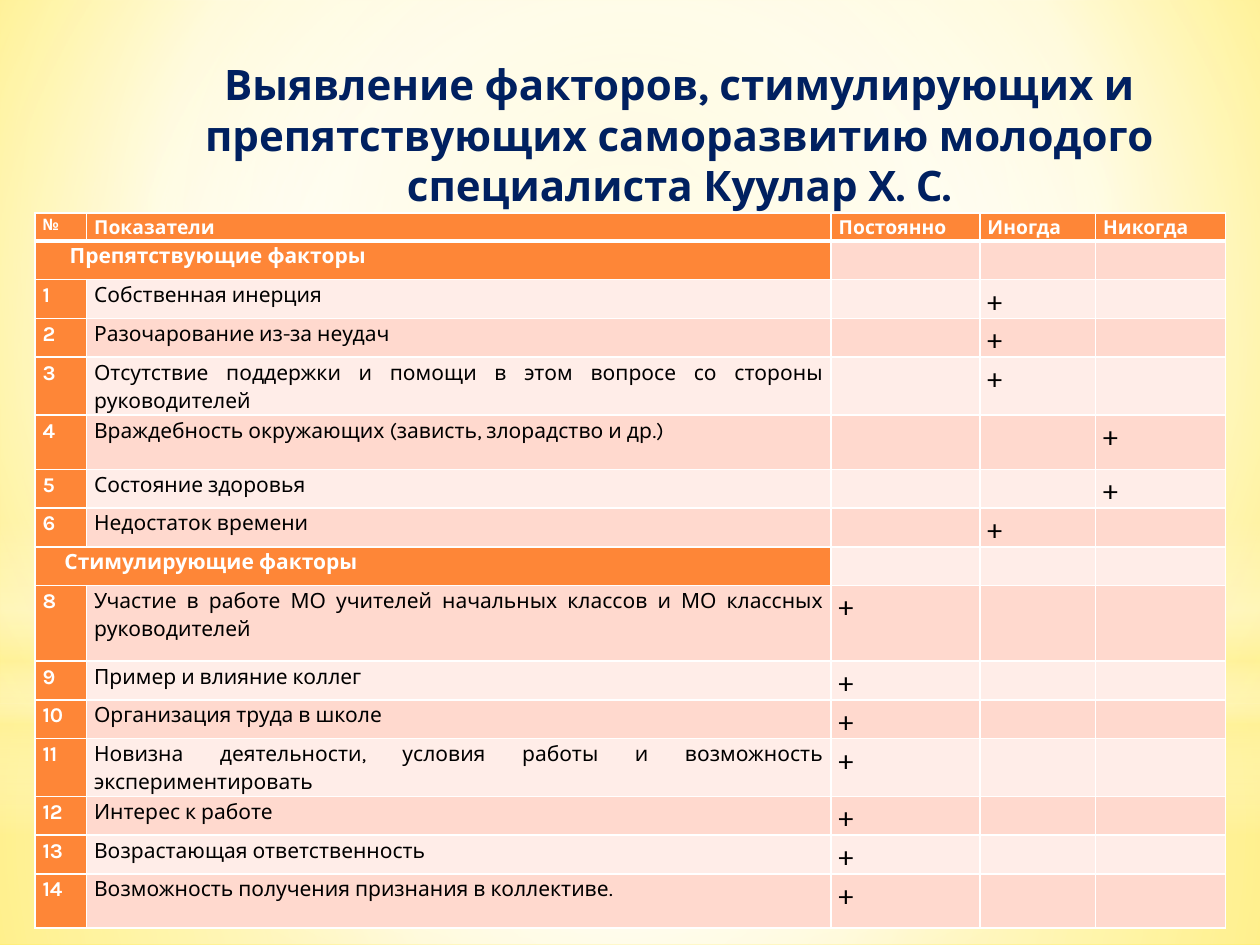
import pptx
import pptx.util
import pptx.dml.color
import pptx.enum.shapes
import pptx.enum.text
import pptx.oxml
import pptx.oxml.ns

Pt = pptx.util.Pt
qn = pptx.oxml.ns.qn
MSO_SHAPE = pptx.enum.shapes.MSO_SHAPE
ALIGN = pptx.enum.text.PP_ALIGN
ANCHOR = pptx.enum.text.MSO_ANCHOR
NS = pptx.oxml.ns.nsdecls("a")

COLORS = {
    "navy": "002060", "white": "FFFFFF", "black": "000000",
    "orange": "FE8637", "band_dark": "FFD9CE", "band_light": "FFEDE8",
    "cream": "FFF39D", "lemon": "FFF18D", "yellow": "FFE94E",
}
CENTRE = (50, 50, 50, 50)

TITLE = ("Выявление факторов, стимулирующих и препятствующих "
         "саморазвитию молодого специалиста Куулар Х. С.")
HEADERS = ["№", "Показатели", "Постоянно", "Иногда", "Никогда"]
ALWAYS, SOMETIMES, NEVER = 2, 3, 4
COL_WIDTHS = [29.5, 425.5, 85, 66.2, 74.2]
HEADER_HEIGHT, ROW, TWO_LINES, TALL, TALLEST = 15.9, 22.15, 33.1, 31, 43.2

# Section: (heading, indent). Factor: (number, text, column of the mark, height).
ROWS = [
    ("Препятствующие факторы", 15.5),
    ("1", "Собственная инерция", SOMETIMES, ROW),
    ("2", "Разочарование из-за неудач", SOMETIMES, ROW),
    ("3", "Отсутствие поддержки и помощи в этом вопросе со стороны руководителей",
     SOMETIMES, TWO_LINES),
    ("4", "Враждебность окружающих (зависть, злорадство и др.)", NEVER, TALL),
    ("5", "Состояние здоровья", NEVER, ROW),
    ("6", "Недостаток времени", SOMETIMES, ROW),
    ("Стимулирующие факторы", 12.5),
    ("8", "Участие в работе МО учителей начальных классов и МО классных руководителей",
     ALWAYS, TALLEST),
    ("9", "Пример и влияние коллег", ALWAYS, ROW),
    ("10", "Организация труда в школе", ALWAYS, ROW),
    ("11", "Новизна деятельности, условия работы и возможность экспериментировать",
     ALWAYS, TWO_LINES),
    ("12", "Интерес к работе", ALWAYS, ROW),
    ("13", "Возрастающая ответственность", ALWAYS, ROW),
    ("14", "Возможность получения признания в коллективе.", ALWAYS, TALL),
]


def rgb(name):
    return pptx.dml.color.RGBColor.from_string(COLORS[name])


class Deck:
    """Holds the presentation style and the current slide."""
    font = "Karla"

    def __init__(self, width, height):
        self.prs = pptx.Presentation()
        self.prs.slide_width, self.prs.slide_height = Pt(width), Pt(height)
        self.slide = self.prs.slides.add_slide(self.prs.slide_layouts[6])

    def gradient(self, fill, owner, stops, centre):
        """Stops are (position %, colour, opacity %); no centre means top to bottom."""
        fill.gradient()
        grad = owner.find(".//" + qn("a:gradFill"))
        for child in list(grad):
            grad.remove(child)
        gs = "".join(
            f'<a:gs pos="{pos * 1000}"><a:srgbClr val="{COLORS[color]}">'
            f'<a:alpha val="{alpha * 1000}"/></a:srgbClr></a:gs>'
            for pos, color, alpha in stops)
        grad.append(pptx.oxml.parse_xml(f"<a:gsLst {NS}>{gs}</a:gsLst>"))
        if centre:
            sides = " ".join(f'{s}="{v * 1000}"' for s, v in zip("ltrb", centre))
            shade = f'<a:path {NS} path="circle"><a:fillToRect {sides}/></a:path>'
        else:
            shade = f'<a:lin {NS} ang="5400000" scaled="0"/>'
        grad.append(pptx.oxml.parse_xml(shade))

    def background(self, stops, centre):
        self.gradient(self.slide.background.fill, self.slide.element, stops, centre)

    def glow(self, kind, top, height, stops, centre=None):
        """Full-width translucent shape."""
        sp = self.slide.shapes.add_shape(
            kind, 0, Pt(top), self.prs.slide_width, Pt(height))
        sp.shadow.inherit = False
        sp.line.fill.background()
        self.gradient(sp.fill, sp.element, stops, centre)

    def set_text(self, tf, text, size, color, bold, align):
        p = tf.paragraphs[0]
        p.alignment = align
        r = p.add_run()
        r.text = text
        r.font.name, r.font.size, r.font.bold = self.font, Pt(size), bold
        r.font.color.rgb = rgb(color)
        return p

    def title(self, text, left, top, width, height):
        tf = self.slide.shapes.add_textbox(
            Pt(left), Pt(top), Pt(width), Pt(height)).text_frame
        tf.word_wrap = True
        tf.vertical_anchor = ANCHOR.MIDDLE
        self.set_text(tf, text, 24, "navy", True, ALIGN.CENTER)

    def table(self, left, top, widths, heights):
        table = self.slide.shapes.add_table(
            len(heights), len(widths), Pt(left), Pt(top),
            Pt(sum(widths)), Pt(sum(heights))).table
        for column, width in zip(table.columns, widths):
            column.width = Pt(width)
        for row, height in zip(table.rows, heights):
            row.height = Pt(height)
        return table

    def cell(self, cell, fill, text="", size=12, color="white", bold=True,
             indent=0, top_line=1, bottom_line=1):
        cell.margin_left, cell.margin_right = Pt(4.3 + indent), Pt(4.3)
        cell.margin_top = cell.margin_bottom = 0
        if text:
            p = self.set_text(cell.text_frame, text, size, color, bold, ALIGN.JUSTIFY)
            p.line_spacing, p.space_after = 1.15, Pt(10)
        tc_pr = cell._tc.get_or_add_tcPr()
        for side, width in zip("LRTB", (1, 1, top_line, bottom_line)):
            tc_pr.append(pptx.oxml.parse_xml(
                f'<a:ln{side} {NS} w="{int(Pt(width))}"><a:solidFill><a:srgbClr '
                f'val="{COLORS["white"]}"/></a:solidFill></a:ln{side}>'))
        cell.fill.solid()
        cell.fill.fore_color.rgb = rgb(fill)


def add_backdrop(deck):
    deck.background([(0, "lemon", 100), (60, "white", 100), (100, "yellow", 100)],
                    (20, 10, 20, 60))
    deck.glow(MSO_SHAPE.RECTANGLE, 402, 138,
              [(0, "white", 91), (37, "white", 76), (100, "cream", 79)], CENTRE)
    deck.glow(MSO_SHAPE.RECTANGLE, 0, 402,
              [(0, "white", 89), (48, "white", 62), (100, "cream", 79)], CENTRE)
    deck.glow(MSO_SHAPE.RECTANGLE, 296.6, 180,
              [(0, "white", 0), (29, "white", 30), (45, "cream", 40),
               (55, "white", 26), (65, "cream", 60), (100, "white", 0)])
    deck.glow(MSO_SHAPE.OVAL, 126, 402, [(0, "white", 100), (56, "white", 0)], CENTRE)


def add_factors(deck):
    heights = [HEADER_HEIGHT] + [row[3] if len(row) == 4 else ROW for row in ROWS]
    table = deck.table(20, 121.8, COL_WIDTHS, heights)
    for col, text in enumerate(HEADERS):
        deck.cell(table.cell(0, col), "orange", text, 11 if col else 9, bottom_line=3)
    for i, row in enumerate(ROWS, 1):
        band = "band_dark" if i % 2 else "band_light"
        top_line = 3 if i == 1 else 1
        first, second = table.cell(i, 0), table.cell(i, 1)
        mark_col = None
        if len(row) == 2:
            heading, indent = row
            first.merge(second)
            deck.cell(first, "orange", heading, indent=indent, top_line=top_line)
            deck.cell(second, "orange", top_line=top_line)
        else:
            number, text, mark_col, _ = row
            deck.cell(first, "orange", number)
            deck.cell(second, band, text, color="black", bold=False)
        for col in (ALWAYS, SOMETIMES, NEVER):
            deck.cell(table.cell(i, col), band, "+" if col == mark_col else "",
                      16, "black", False, top_line=top_line)


def main():
    deck = Deck(720, 540)
    add_backdrop(deck)
    add_factors(deck)
    deck.title(TITLE, 76.5, 31.7, 623.5, 90)
    deck.prs.save("out.pptx")


if __name__ == "__main__":
    main()
